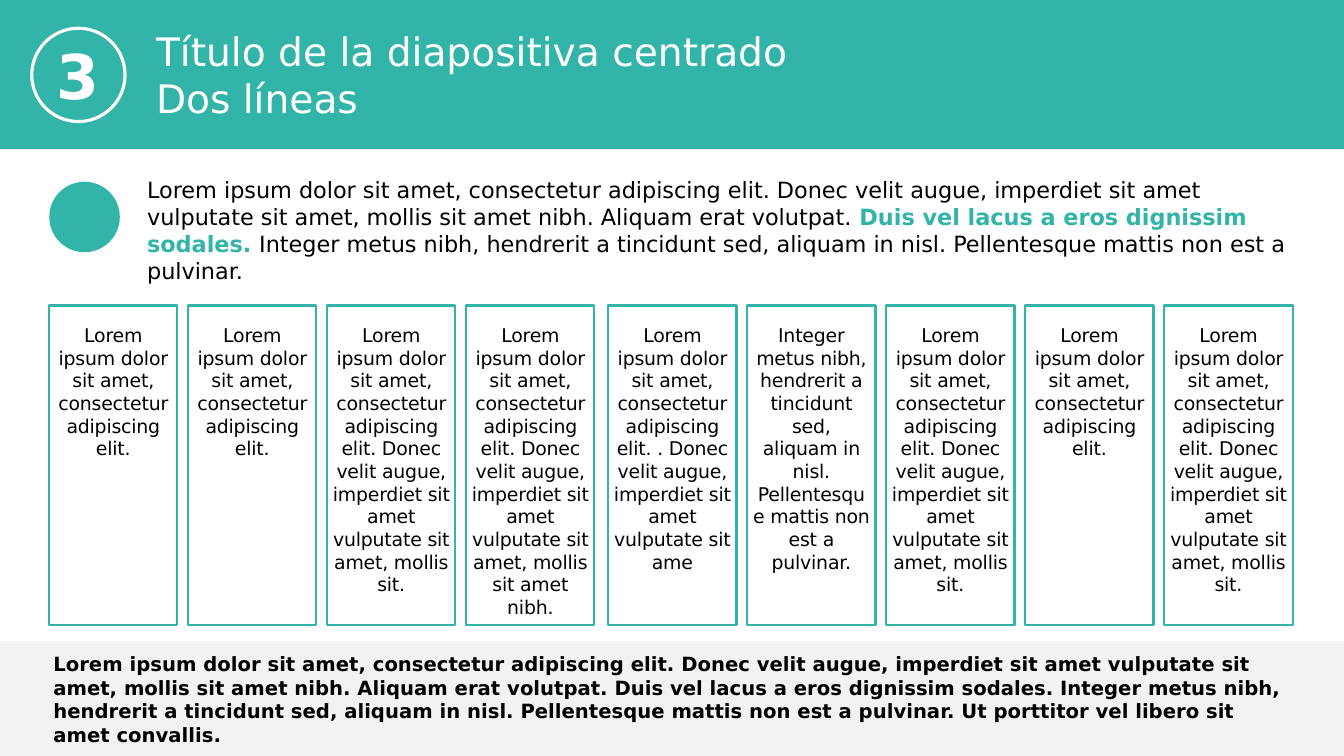
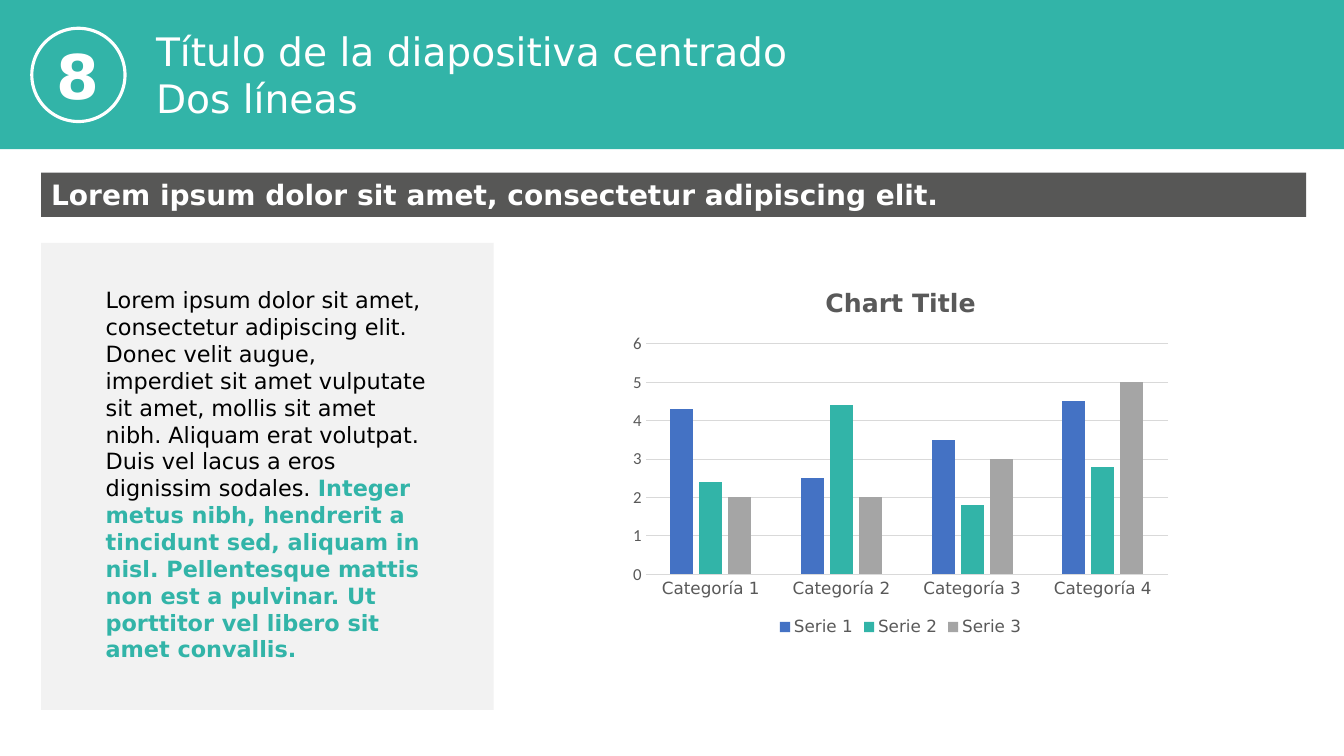
from dataclasses import dataclass

import pptx
import pptx.chart.data
import pptx.dml.color
import pptx.enum.chart
import pptx.enum.shapes
import pptx.enum.text
import pptx.util

Pt = pptx.util.Pt
Shape = pptx.enum.shapes.MSO_SHAPE
Align = pptx.enum.text.PP_ALIGN
Anchor = pptx.enum.text.MSO_ANCHOR

# Shared look
FONT = "DejaVu Sans"
TEAL, PALE, DARK = "32B4A8", "F2F2F2", "575756"
WHITE, BLACK, GREY, RULE = "FFFFFF", "000000", "595959", "D9D9D9"
WIDE, HIGH = 960, 540
TITLE = "Título de la diapositiva centrado\nDos líneas"

# Recurring wording
LOREM = "Lorem ipsum dolor sit amet, consectetur adipiscing elit."
DONEC = "Donec velit augue, imperdiet sit amet vulputate sit amet, mollis sit"
ALIQUAM = "Aliquam erat volutpat."
DUIS = "Duis vel lacus a eros dignissim sodales."
METUS = ("Integer metus nibh, hendrerit a tincidunt sed, aliquam in nisl. "
         "Pellentesque mattis non est a pulvinar.")
UT = "Ut porttitor vel libero sit amet convallis."
OPEN = f"{LOREM} {DONEC} amet nibh. {ALIQUAM}"
LONG = f"{LOREM} {DONEC}."


@dataclass(frozen=True)
class Box:
    left: float
    top: float
    width: float
    height: float

    def place(self) -> tuple:
        return tuple(Pt(n) for n in (self.left, self.top, self.width, self.height))


@dataclass(frozen=True)
class Style:
    size: float
    color: str = BLACK
    bold: bool = False


@dataclass(frozen=True)
class Piece:
    text: str
    style: Style


@dataclass(frozen=True)
class Series:
    name: str
    color: str
    values: tuple


BODY = Style(16)
STRONG = Style(16, TEAL, True)

CARDS = (
    LOREM,
    LOREM,
    LONG,
    f"{LOREM} {DONEC} amet nibh.",
    f"{LOREM} . Donec velit augue, imperdiet sit amet vulputate sit ame",
    METUS,
    LONG,
    LOREM,
    LONG,
)
GROUPS = ("Categoría 1", "Categoría 2", "Categoría 3", "Categoría 4")
SERIES = (
    Series("Serie 1", "4472C4", (4.3, 2.5, 3.5, 4.5)),
    Series("Serie 2", TEAL, (2.4, 4.4, 1.8, 2.8)),
    Series("Serie 3", "A5A5A5", (2, 2, 3, 5)),
)


# Helpers
def rgb(code: str) -> pptx.dml.color.RGBColor:
    return pptx.dml.color.RGBColor.from_string(code)


def ink(font, style: Style, name: str = FONT) -> None:
    font.name, font.size, font.bold = name, Pt(style.size), style.bold
    font.color.rgb = rgb(style.color)


def draw(slide, kind, box: Box, fill: str = "", line: str = "", width: float = 1.5):
    shape = slide.shapes.add_shape(kind, *box.place())
    shape.shadow.inherit = False
    if fill:
        shape.fill.solid()
        shape.fill.fore_color.rgb = rgb(fill)
    else:
        shape.fill.background()
    if line:
        shape.line.color.rgb = rgb(line)
        shape.line.width = Pt(width)
    else:
        shape.line.fill.background()
    return shape


def write(shape, text: str, style: Style, align=Align.LEFT, anchor=Anchor.TOP):
    frame = shape.text_frame
    frame.word_wrap, frame.vertical_anchor = True, anchor
    frame.text = text
    for para in frame.paragraphs:
        para.alignment = align
        for run in para.runs:
            ink(run.font, style)
    return frame


def inset(frame, left: float, top: float, right: float, bottom: float) -> None:
    frame.margin_left, frame.margin_top = Pt(left), Pt(top)
    frame.margin_right, frame.margin_bottom = Pt(right), Pt(bottom)


def prose(slide, box: Box, *pieces: Piece) -> None:
    frame = slide.shapes.add_textbox(*box.place()).text_frame
    frame.word_wrap = True
    for piece in pieces:
        run = frame.paragraphs[0].add_run()
        run.text = piece.text
        ink(run.font, piece.style)


def start(deck, number: int):
    """Add a slide with its band, number badge and title."""
    slide = deck.slides.add_slide(deck.slide_layouts[6])
    draw(slide, Shape.RECTANGLE, Box(0, 0, WIDE, 106.6), TEAL)
    badge = draw(slide, Shape.OVAL, Box(22.7, 20.2, 66.6, 66.6), line=WHITE, width=2.25)
    write(badge, str(number), Style(44, WHITE, True), Align.CENTER, Anchor.MIDDLE)
    title = slide.shapes.add_textbox(*Box(104.4, 12.2, 662, 75).place())
    inset(write(title, TITLE, Style(28, WHITE)), 7.2, 7.2, 7.2, 7.2)
    return slide


# Slide with nine cards
def cards(deck) -> None:
    slide = start(deck, 3)
    draw(slide, Shape.RECTANGLE, Box(0, 458, WIDE, HIGH - 458), PALE)
    draw(slide, Shape.OVAL, Box(35.2, 129.8, 50.4, 50.4), TEAL)
    prose(slide, Box(98, 122.5, 838, 85),
          Piece(f"{OPEN} ", BODY), Piece(f"{DUIS} ", STRONG), Piece(METUS, BODY))
    prose(slide, Box(31, 462.3, 893.5, 75),
          Piece(f"{OPEN} {DUIS} {METUS} {UT}", Style(14, bold=True)))

    step, shift = 99.3, 2.2
    for i, text in enumerate(CARDS):
        left = 35.1 + i * step + (shift if i >= 4 else 0)
        card = draw(slide, Shape.RECTANGLE, Box(left, 218.2, 91.6, 228.4), line=TEAL)
        frame = write(card, text, Style(13.5), Align.CENTER)
        inset(frame, 3.6, 13, 3.6, 3.6)
        for run in frame.paragraphs[0].runs:
            run.font._element.set("spc", "-10")


# Slide with text panel and chart
def plot(slide, box: Box) -> None:
    data = pptx.chart.data.CategoryChartData()
    data.categories = GROUPS
    for item in SERIES:
        data.add_series(item.name, item.values)
    kind = pptx.enum.chart.XL_CHART_TYPE.COLUMN_CLUSTERED
    chart = slide.shapes.add_chart(kind, *box.place(), data).chart
    ink(chart.font, Style(10), "Calibri")

    chart.has_title = True
    title = chart.chart_title
    title.include_in_layout = False
    title.text_frame.text = "Chart Title"
    ink(title.text_frame.paragraphs[0].runs[0].font, Style(18, GREY, True))

    bars = chart.plots[0]
    bars.gap_width, bars.overlap, bars.vary_by_categories = 219, -27, False
    for item, bar in zip(SERIES, bars.series):
        bar.format.fill.solid()
        bar.format.fill.fore_color.rgb = rgb(item.color)

    label = Style(12, GREY)
    base, scale = chart.category_axis, chart.value_axis
    for axis, name in ((base, FONT), (scale, "Calibri")):
        axis.major_tick_mark = pptx.enum.chart.XL_TICK_MARK.NONE
        axis.minor_tick_mark = pptx.enum.chart.XL_TICK_MARK.NONE
        ink(axis.tick_labels.font, label, name)
    scale.minimum_scale, scale.maximum_scale, scale.major_unit = 0, 6, 1
    scale.format.line.fill.background()
    for line in (base.format.line, scale.major_gridlines.format.line):
        line.color.rgb = rgb(RULE)
        line.width = Pt(0.75)

    chart.has_legend = True
    chart.legend.position = pptx.enum.chart.XL_LEGEND_POSITION.BOTTOM
    chart.legend.include_in_layout = False
    ink(chart.legend.font, label)


def report(deck) -> None:
    slide = start(deck, 8)
    strip = draw(slide, Shape.RECTANGLE, Box(29.4, 123.4, 903.6, 31.5), DARK)
    write(strip, LOREM, Style(20, WHITE, True))
    draw(slide, Shape.RECTANGLE, Box(29.4, 173.5, 323.2, 333.5), PALE)
    prose(slide, Box(68.4, 201, 245.5, 278.6),
          Piece(f"{OPEN} {DUIS} ", BODY), Piece(f"{METUS} {UT}", STRONG))
    plot(slide, Box(444.2, 192.2, 398.2, 265.7))


def main() -> None:
    deck = pptx.Presentation()
    deck.slide_width, deck.slide_height = Pt(WIDE), Pt(HIGH)
    cards(deck)
    report(deck)
    deck.save("out.pptx")


if __name__ == "__main__":
    main()
